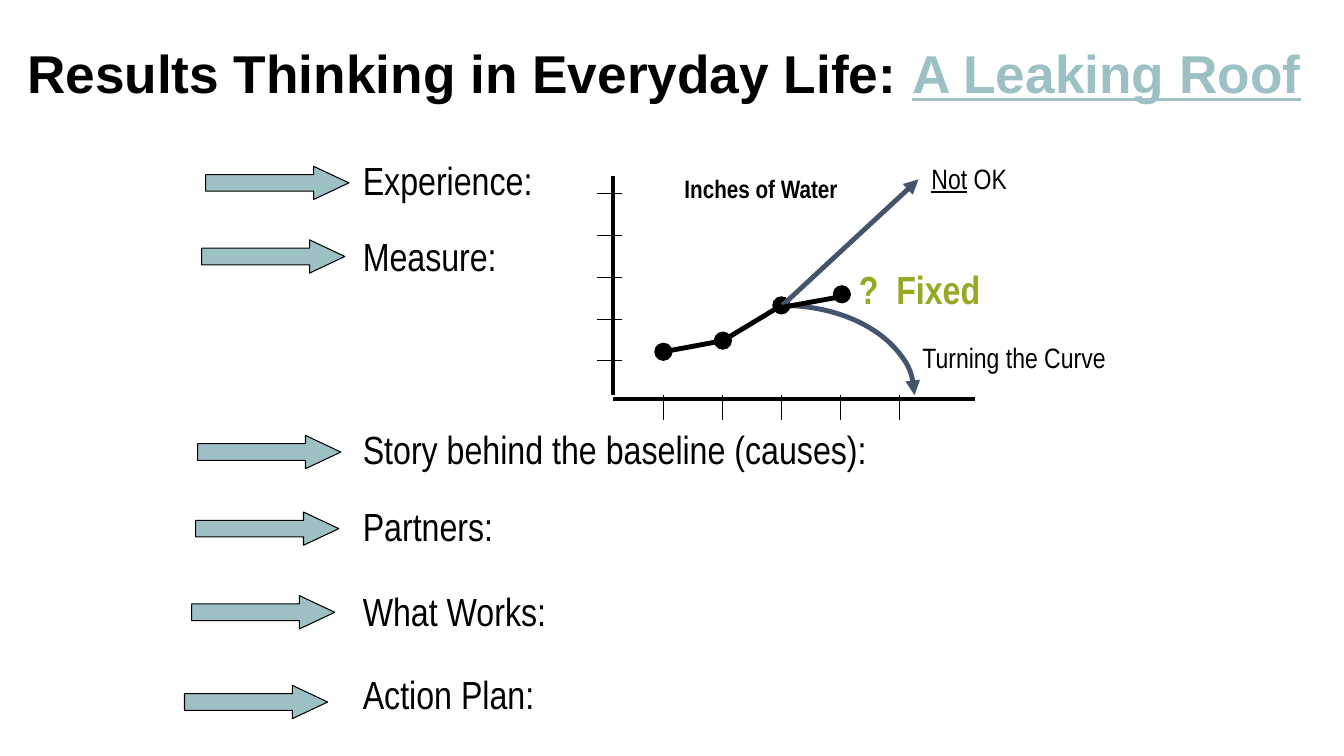
from lxml.etree import SubElement
from pptx import Presentation
from pptx.dml.color import RGBColor
from pptx.enum.shapes import MSO_CONNECTOR, MSO_SHAPE
from pptx.enum.text import MSO_ANCHOR, PP_ALIGN
from pptx.oxml.ns import qn
from pptx.util import Inches, Pt

BLACK = RGBColor(0x00, 0x00, 0x00)
TEAL = RGBColor(0x9D, 0xC0, 0xC4)
SLATE = RGBColor(0x44, 0x54, 0x6A)
OLIVE = RGBColor(0x97, 0xA8, 0x25)

# Label, label top, label width, arrow left, arrow top
STEPS = [
    ("Experience:", 1.5, 2.25, 2.04, 1.65),
    ("Measure:", 2.25, 2.25, 2, 2.38),
    ("Story behind the baseline (causes):", 4.17, 5.25, 1.96, 4.32),
    ("Partners:", 4.93, 2.25, 1.94, 5.08),
    ("What Works:", 5.77, 2.25, 1.9, 5.91),
    ("Action Plan:", 6.6, 2.25, 1.83, 6.8),
]
FIRST_TICK_X, TICK_STEP_X = 6.58, 0.585
LAST_TICK_Y, TICK_STEP_Y = 3.58, 0.415
DOT_SIZE = 0.17
HISTORY = [(6.58, 3.49), (7.17, 3.38), (7.75, 3.03)]
FORECAST = (8.35, 2.92)


def add_label(shapes, left, top, width, height, spans, **common):
    """Add one line of text; each span is its text and its own font values."""
    box = shapes.add_textbox(Inches(left), Inches(top), Inches(width), Inches(height))
    frame = box.text_frame
    frame.word_wrap = True
    frame.vertical_anchor = MSO_ANCHOR.BOTTOM
    para = frame.paragraphs[0]
    for text, own in spans:
        span = para.add_run()
        span.text = text
        values = {"name": "Arial Narrow", "color": BLACK} | common | own
        span.font.color.rgb = values.pop("color")
        for name, value in values.items():
            setattr(span.font, name, value)
    return para


def add_arrowhead(shape):
    outline = shape.line._get_or_add_ln()
    SubElement(outline, qn("a:tailEnd"), type="triangle")


def add_line(shapes, start, end, width, color=BLACK):
    points = [Inches(value) for value in (*start, *end)]
    line = shapes.add_connector(MSO_CONNECTOR.STRAIGHT, *points)
    line.line.color.rgb = color
    line.line.width = Pt(width)
    SubElement(line._element.spPr, qn("a:effectLst"))
    return line


def add_filled(shapes, kind, left, top, width, height, color):
    shape = shapes.add_shape(
        kind, Inches(left), Inches(top), Inches(width), Inches(height))
    shape.shadow.inherit = False
    shape.fill.solid()
    shape.fill.fore_color.rgb = color
    shape.line.color.rgb = BLACK
    shape.line.width = Pt(0.75)
    return shape


def add_dot(shapes, center):
    x, y = center
    add_filled(shapes, MSO_SHAPE.FLOWCHART_CONNECTOR, x - DOT_SIZE / 2,
               y - DOT_SIZE / 2, DOT_SIZE, DOT_SIZE, BLACK)


def add_title(shapes):
    para = add_label(shapes, 0, 0.58, 13.17, 0.46, [
        ("Results Thinking in Everyday Life: ", {}),
        ("A Leaking Roof", {"color": TEAL, "underline": True}),
    ], name="Arial", size=Pt(38), bold=True)
    para.alignment = PP_ALIGN.CENTER
    para.line_spacing = 0.5


def add_steps(shapes):
    for text, top, width, arrow_left, arrow_top in STEPS:
        add_label(shapes, 3.5, top, width, 0.57, [(text, {})], size=Pt(28))
        arrow = add_filled(shapes, MSO_SHAPE.RIGHT_ARROW, arrow_left, arrow_top,
                           1.42, 0.33, TEAL)
        arrow.adjustments[1] = 1.06


def add_axes(shapes):
    add_line(shapes, (6.08, 1.75), (6.08, 3.92), 2.5)
    add_line(shapes, (6.08, 3.96), (9.67, 3.96), 2.5)
    for index in range(5):
        y = LAST_TICK_Y - index * TICK_STEP_Y
        add_line(shapes, (5.92, y), (6.17, y), 0.75)
        x = FIRST_TICK_X + index * TICK_STEP_X
        add_line(shapes, (x, 3.92), (x, 4.17), 0.75)


def add_turning_curve(shapes):
    """Add the quarter arc that bends from the last reading to the axis."""
    curve = shapes.add_shape(
        MSO_SHAPE.ARC, Inches(6.45), Inches(3.03), Inches(2.62), Inches(1.78))
    curve.shadow.inherit = False
    curve.fill.background()
    curve.line.color.rgb = SLATE
    curve.line.width = Pt(3.5)
    add_arrowhead(curve)


def add_water_chart(shapes):
    add_axes(shapes)
    for reading in HISTORY:
        add_dot(shapes, reading)
    for start, end in zip(HISTORY, HISTORY[1:]):
        add_line(shapes, start, end, 3.5)
    add_arrowhead(add_line(shapes, (7.76, 3.03), (9.11, 1.78), 3.5, SLATE))
    add_turning_curve(shapes)
    add_label(shapes, 6.69, 1.67, 1.81, 0.4, [("Inches of Water", {})],
              size=Pt(18), bold=True)

    fixed = shapes.add_group_shape().shapes
    add_dot(fixed, FORECAST)
    add_line(fixed, (7.75, 3.05), (8.36, 2.94), 3.5)
    add_label(fixed, 8.42, 2.58, 1.5, 0.57, [("?  Fixed", {})],
              size=Pt(28), bold=True, color=OLIVE)

    add_label(shapes, 9.14, 1.56, 1.03, 0.43,
              [("Not", {"underline": True}), (" OK", {})], size=Pt(20))
    add_label(shapes, 9.05, 3.33, 2.16, 0.43, [("Turning the Curve", {})],
              size=Pt(20))


def main():
    deck = Presentation()
    deck.slide_width = Inches(13.33)
    deck.slide_height = Inches(7.5)
    page = deck.slides.add_slide(deck.slide_layouts[6])
    add_title(page.shapes)
    add_steps(page.shapes)
    add_water_chart(page.shapes)
    deck.save("out.pptx")


if __name__ == "__main__":
    main()
